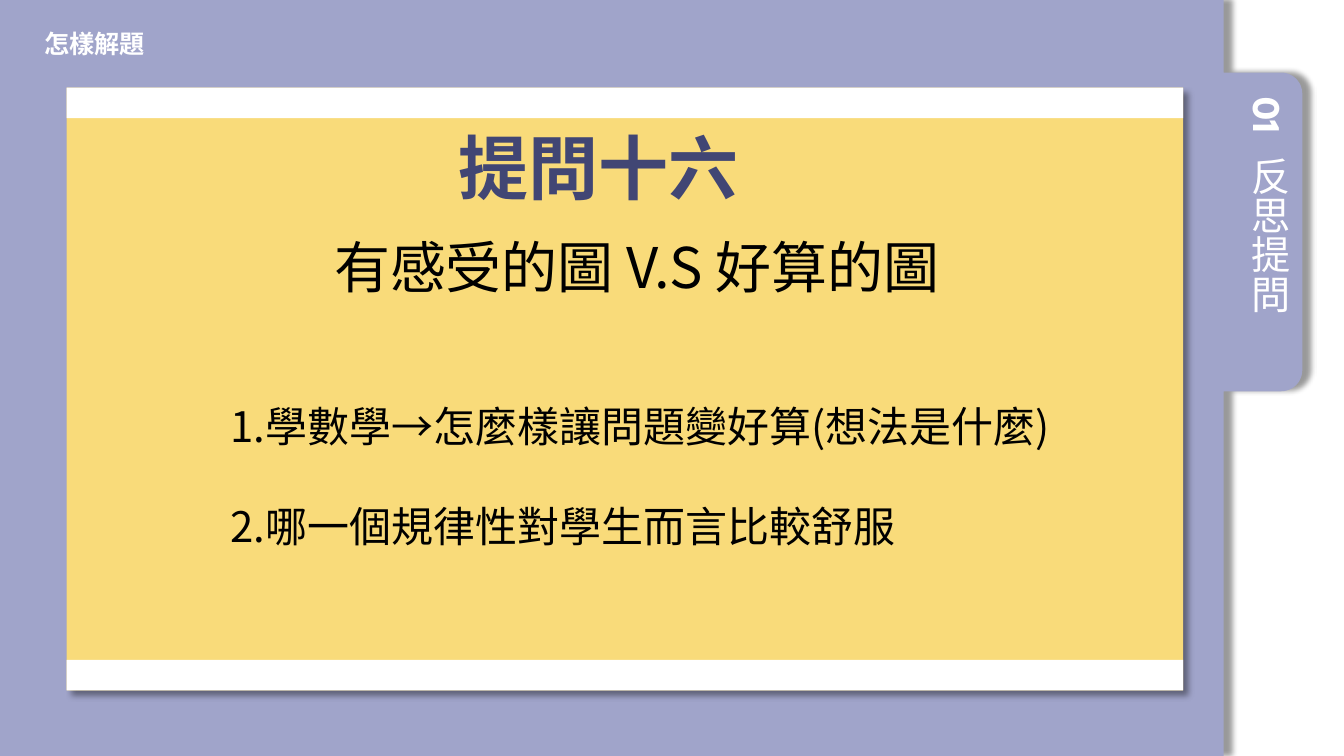
import math
from dataclasses import dataclass

from lxml import etree
from pptx import Presentation
from pptx import util as u
from pptx.dml.color import RGBColor
from pptx.enum import shapes, text
from pptx.oxml import parse_xml
from pptx.oxml.ns import nsdecls, qn


@dataclass(frozen=True)
class Theme:
    lavender: str = "A0A4CA"
    yellow: str = "F9DB7A"
    white: str = "FFFFFF"
    navy: str = "414674"
    black: str = "000000"
    body_font: str = "Noto Sans CJK SC"
    label_font: str = "League Spartan"
    title_size: int = 50
    subtitle_size: int = 40
    list_size: int = 30
    tab_size: int = 28
    header_size: int = 18


class SlideBuilder:
    """Draws themed elements on one slide, with lengths in centimetres."""

    def __init__(self, presentation, theme):
        self.theme = theme
        self.slide = presentation.slides.add_slide(presentation.slide_layouts[5])

    def paint(self, shape, color, shadow_angle=None):
        shape.shadow.inherit = False
        shape.fill.solid()
        shape.fill.fore_color.rgb = RGBColor.from_string(color)
        shape.line.fill.background()
        if shadow_angle is not None:
            effects = shape._element.spPr.find(qn("a:effectLst"))
            effects.append(parse_xml(
                f'<a:outerShdw {nsdecls("a")} blurRad="{u.Pt(4)}" dist="{u.Pt(6)}" '
                f'dir="{shadow_angle * 60000}" algn="tl" rotWithShape="0">'
                '<a:srgbClr val="000000"><a:alpha val="40000"/></a:srgbClr></a:outerShdw>'))

    def rectangle(self, box, color, shadow_angle=None):
        shape = self.slide.shapes.add_shape(shapes.MSO_SHAPE.RECTANGLE, *map(u.Cm, box))
        self.paint(shape, color, shadow_angle)

    def tabbed_panel(self, edge, height, tab_right, tab_top, tab_bottom, radius):
        def corner(center_y, start):
            angles = [math.radians(start + step * 7.5) for step in range(13)]
            return [(tab_right - radius + radius * math.cos(angle),
                     center_y + radius * math.sin(angle)) for angle in angles]

        outline = [(edge, 0), (edge, tab_top), *corner(tab_top + radius, -90),
                   *corner(tab_bottom - radius, 0), (edge, tab_bottom),
                   (edge, height), (0, height)]
        freeform = self.slide.shapes.build_freeform(0, 0)
        freeform.add_line_segments([(u.Cm(x), u.Cm(y)) for x, y in outline])
        self.paint(freeform.convert_to_shape(), self.theme.lavender, 0)

    def title(self, box, words, **style):
        shape = self.slide.shapes.title
        self.slide.shapes._spTree.append(shape._element)
        shape.left, shape.top, shape.width, shape.height = map(u.Cm, box)
        self.set_text(shape, [words], align=text.PP_ALIGN.CENTER, **style)

    def textbox(self, box, lines, **style):
        self.set_text(self.slide.shapes.add_textbox(*map(u.Cm, box)), lines, **style)

    def set_text(self, shape, lines, size, color, font=None, bold=False, spacing=1.0,
                 gap=0, align=text.PP_ALIGN.LEFT, anchor=text.MSO_ANCHOR.TOP,
                 vertical=False):
        frame = shape.text_frame
        frame.text = "\n".join(lines)
        frame.word_wrap = True
        frame.auto_size = text.MSO_AUTO_SIZE.NONE
        frame.vertical_anchor = anchor
        if vertical:
            frame._txBody.bodyPr.set("vert", "eaVert")
        for index, paragraph in enumerate(frame.paragraphs):
            paragraph.alignment = align
            paragraph.line_spacing = spacing
            paragraph.space_before = u.Pt(gap if index else 0)
            paragraph.font.size = u.Pt(size)
            paragraph.font.bold = bold
            paragraph.font.color.rgb = RGBColor.from_string(color)
            paragraph.font.name = font or self.theme.body_font
            east_asian = etree.SubElement(paragraph.font._element, qn("a:ea"))
            east_asian.set("typeface", self.theme.body_font)


def main():
    theme = Theme()
    presentation = Presentation()
    presentation.slide_width, presentation.slide_height = u.Cm(33.87), u.Cm(19.05)
    builder = SlideBuilder(presentation, theme)

    builder.tabbed_panel(edge=30.84, height=19.05, tab_right=32.82,
                         tab_top=1.83, tab_bottom=9.86, radius=0.53)
    tab_style = dict(size=theme.tab_size, color=theme.white, spacing=0.9, vertical=True)
    builder.textbox((30.89, 3.71, 1.68, 6.05), ["反思提問"], **tab_style)
    builder.textbox((30.89, 2.21, 1.68, 1.5), ["01"], font=theme.label_font,
                    bold=True, **tab_style)
    builder.textbox((0.86, 0.66, 10.95, 0.99), ["怎樣解題"], size=theme.header_size,
                    color=theme.white, font=theme.label_font, bold=True, spacing=0.9,
                    anchor=text.MSO_ANCHOR.MIDDLE)

    left, top, width, height, band = 1.68, 2.21, 28.14, 15.19, 0.77
    builder.rectangle((left, top, width, height), theme.yellow, 45)
    for band_top in (top, top + height - band):
        builder.rectangle((left, band_top, width, band), theme.white)

    builder.title((11.3, 3, 7.57, 2.39), "提問十六", size=theme.title_size,
                  color=theme.navy, bold=True)
    builder.textbox((2.92, 5.23, 26.26, 2.26), ["有感受的圖 V.S 好算的圖"],
                    size=theme.subtitle_size, color=theme.black, spacing=1.3,
                    align=text.PP_ALIGN.CENTER)
    builder.textbox((5.56, 9.96, 21.51, 4.11),
                    ["1.學數學→怎麼樣讓問題變好算(想法是什麼)",
                     "2.哪一個規律性對學生而言比較舒服"],
                    size=theme.list_size, color=theme.black, gap=36)
    presentation.save("out.pptx")


if __name__ == "__main__":
    main()
